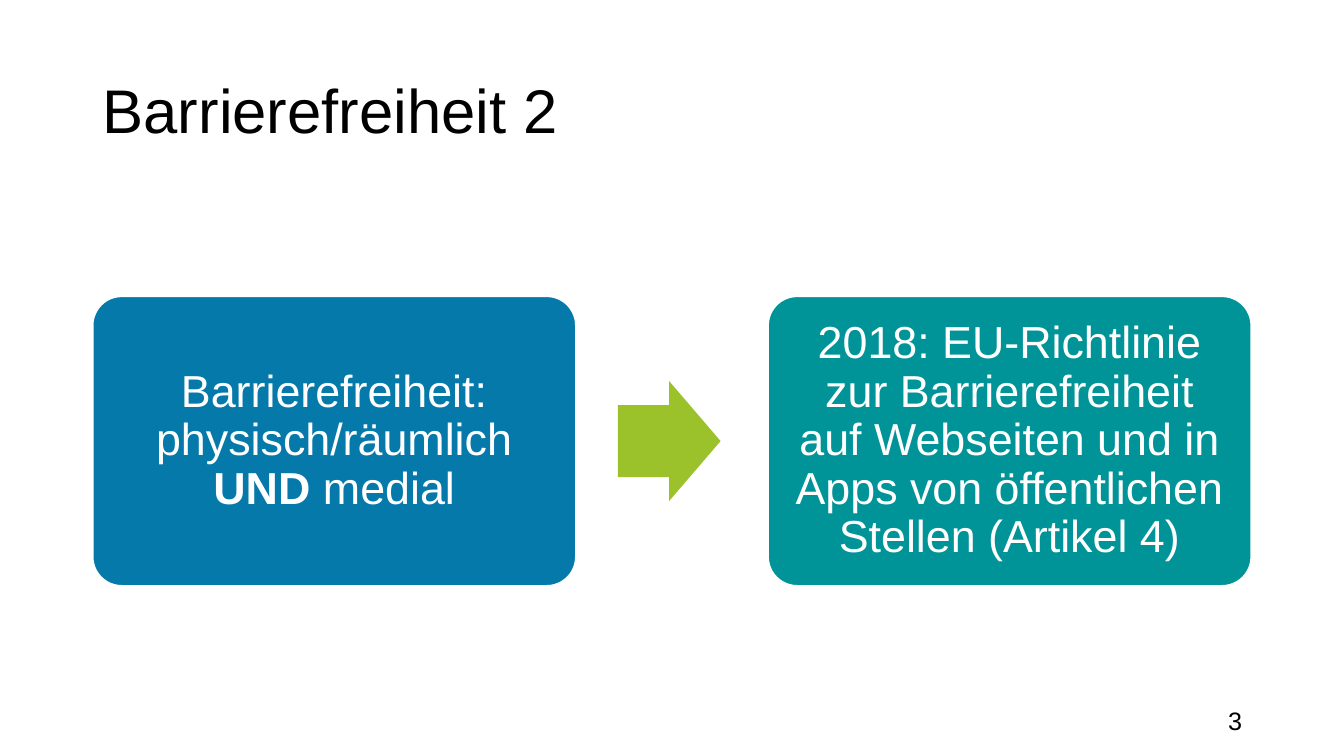
from pptx import Presentation
from pptx import util as u
from pptx.dml import color
from pptx.enum import shapes, text

Cm = u.Cm
FONT = "Arial"
COLOURS = {
    "text": "000000",
    "white": "FFFFFF",
    "blue": "0579AA",
    "teal": "009499",
    "green": "9BC22B",
}
MARGIN = 2.34
BOX_TOP, BOX_WIDTH, BOX_HEIGHT = 7.47, 12.17, 7.29
BOX_STEP = 17.02
BOX_INSET = 0.32
ARROW_LEFT, ARROW_WIDTH, ARROW_HEIGHT = 15.57, 2.59, 3.02


def rgb(name):
    return color.RGBColor.from_string(COLOURS[name])


def write(shape, runs, size, colour, align, anchor, line_spacing=1.0):
    """Fill a shape with one paragraph of (wording, bold) runs."""
    frame = shape.text_frame
    frame.word_wrap = True
    frame.vertical_anchor = anchor
    paragraph = frame.paragraphs[0]
    paragraph.alignment = align
    paragraph.line_spacing = line_spacing
    paragraph.font.name = FONT
    paragraph.font.size = u.Pt(size)
    paragraph.font.color.rgb = rgb(colour)
    for wording, bold in runs:
        run = paragraph.add_run()
        run.text = wording
        if bold:
            run.font.bold = True


def add_label(slide, left, top, width, height, wording, size, align, anchor, line_spacing=1.0):
    label = slide.shapes.add_textbox(Cm(left), Cm(top), Cm(width), Cm(height))
    write(label, [(wording, False)], size, "text", align, anchor, line_spacing)


def add_preset(slide, kind, left, top, width, height, fill, adjustments):
    shape = slide.shapes.add_shape(kind, Cm(left), Cm(top), Cm(width), Cm(height))
    for index, value in enumerate(adjustments):
        shape.adjustments[index] = value
    shape.shadow.inherit = False
    shape.fill.solid()
    shape.fill.fore_color.rgb = rgb(fill)
    shape.line.fill.background()
    return shape


def add_box(slide, left, fill, runs):
    box = add_preset(slide, shapes.MSO_SHAPE.ROUNDED_RECTANGLE, left, BOX_TOP,
                     BOX_WIDTH, BOX_HEIGHT, fill, [0.1])
    box.line.color.rgb = rgb("white")
    box.line.width = u.Pt(1)
    frame = box.text_frame
    frame.margin_left = frame.margin_right = Cm(BOX_INSET)
    frame.margin_top = frame.margin_bottom = Cm(BOX_INSET)
    write(box, runs, 32, "white", text.PP_ALIGN.CENTER, text.MSO_ANCHOR.MIDDLE, 0.9)


def main():
    presentation = Presentation()
    presentation.slide_width = Cm(33.87)
    presentation.slide_height = Cm(19.05)
    slide = presentation.slides.add_slide(presentation.slide_layouts[6])

    # Title
    add_label(slide, MARGIN, 1.02, 29.21, 3.68, "Barrierefreiheit 2", 44,
              text.PP_ALIGN.LEFT, text.MSO_ANCHOR.MIDDLE, 0.9)

    # Two steps joined by an arrow
    steps = [
        ("blue", [("Barrierefreiheit: physisch/räumlich ", False),
                  ("UND", True), (" medial", False)]),
        ("teal", [("2018: EU-Richtlinie zur Barrierefreiheit auf Webseiten und in "
                   "Apps von öffentlichen Stellen (Artikel 4)", False)]),
    ]
    for index, (fill, runs) in enumerate(steps):
        add_box(slide, MARGIN + index * BOX_STEP, fill, runs)
    arrow_top = BOX_TOP + (BOX_HEIGHT - ARROW_HEIGHT) / 2
    add_preset(slide, shapes.MSO_SHAPE.RIGHT_ARROW, ARROW_LEFT, arrow_top,
               ARROW_WIDTH, ARROW_HEIGHT, "green", [0.6, 0.5])

    # Slide number
    add_label(slide, 23.93, 17.65, 7.62, 1.02, "3", 18,
              text.PP_ALIGN.RIGHT, text.MSO_ANCHOR.TOP)

    presentation.save("out.pptx")


if __name__ == "__main__":
    main()
